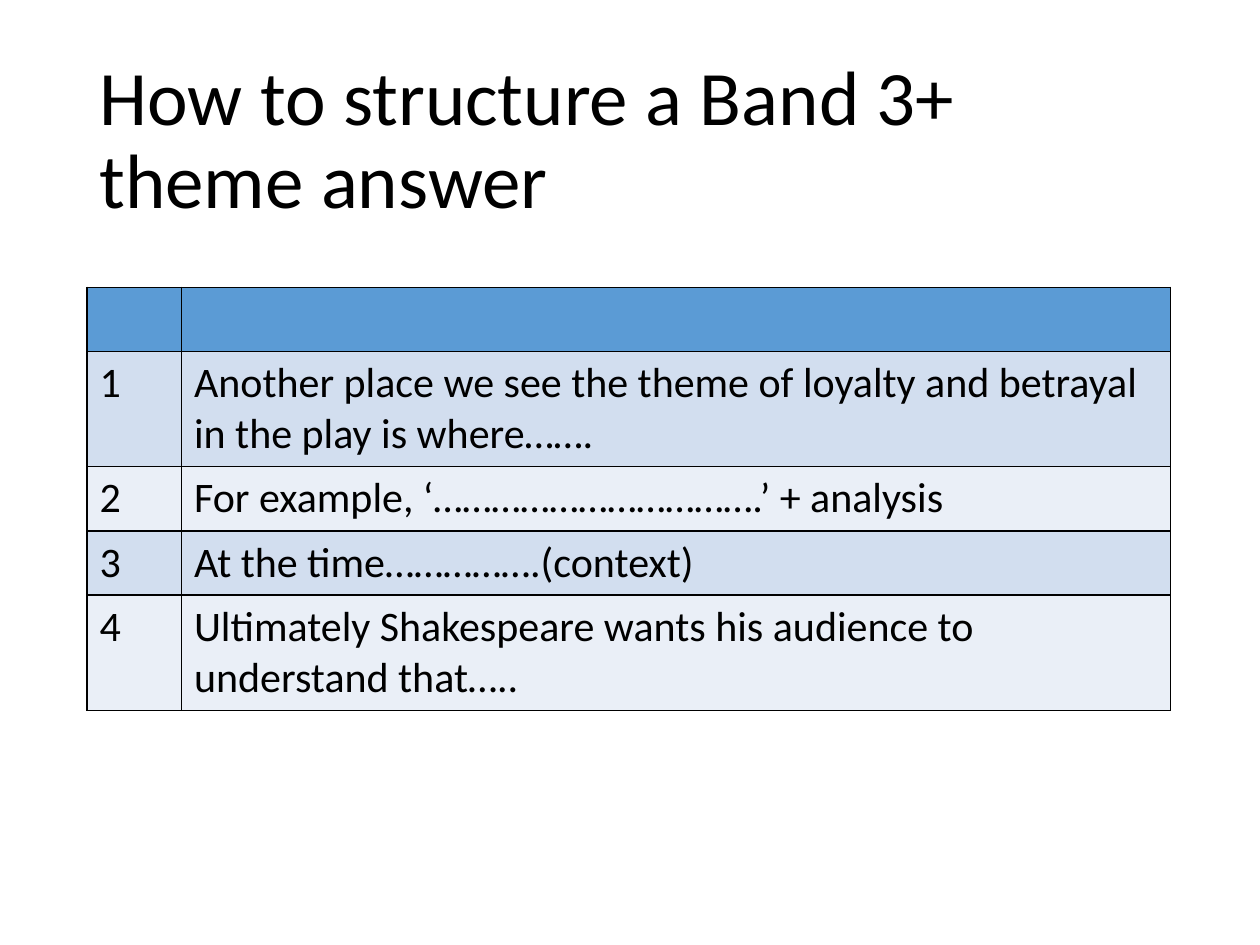
from lxml import etree
from pptx import Presentation
from pptx.dml.color import RGBColor
from pptx.enum import text
from pptx.oxml import ns
from pptx.util import Inches, Pt

BLACK = RGBColor(0x00, 0x00, 0x00)
HEADER_BLUE = RGBColor(0x5B, 0x9B, 0xD5)
BAND_COLORS = (RGBColor(0xD2, 0xDE, 0xEF), RGBColor(0xEA, 0xEF, 0xF7))
FONT = "Calibri"
COLUMN_WIDTHS = (0.75, 7.85)
SINGLE_LINE, DOUBLE_LINE = 0.51, 0.91
STEPS = (
    ("Another place we see the theme of loyalty and betrayal in the play is where…….", DOUBLE_LINE),
    ("For example, ‘…………………………….’ + analysis", SINGLE_LINE),
    ("At the time…………….(context)", SINGLE_LINE),
    ("Ultimately Shakespeare wants his audience to understand that…..", DOUBLE_LINE),
)


def format_paragraph(paragraph, size):
    paragraph.alignment = text.PP_ALIGN.LEFT
    paragraph.font.name = FONT
    paragraph.font.size = Pt(size)
    paragraph.font.bold = False
    paragraph.font.color.rgb = BLACK


def add_title(slide, wording):
    title = slide.shapes.title
    title.left, title.top = Inches(0.69), Inches(0.4)
    title.width, title.height = Inches(8.62), Inches(1.45)
    frame = title.text_frame
    frame.text = wording
    frame.word_wrap = True
    frame.auto_size = text.MSO_AUTO_SIZE.NONE
    frame.vertical_anchor = text.MSO_ANCHOR.MIDDLE
    paragraph = frame.paragraphs[0]
    paragraph.line_spacing = 0.9
    format_paragraph(paragraph, 44)


def add_borders(cell):
    properties = cell._tc.get_or_add_tcPr()
    for position, side in enumerate(("lnL", "lnR", "lnT", "lnB")):
        line = etree.Element(ns.qn(f"a:{side}"), w=str(Pt(1)))
        fill = etree.SubElement(line, ns.qn("a:solidFill"))
        etree.SubElement(fill, ns.qn("a:srgbClr"), val=str(BLACK))
        properties.insert(position, line)


def fill_cell(cell, wording, color):
    cell.text = wording
    cell.fill.solid()
    cell.fill.fore_color.rgb = color
    format_paragraph(cell.text_frame.paragraphs[0], 24)
    add_borders(cell)


def add_steps_table(slide):
    rows = [("", "", SINGLE_LINE, HEADER_BLUE)]
    for index, (wording, height) in enumerate(STEPS):
        rows.append((str(index + 1), wording, height, BAND_COLORS[index % 2]))
    total_height = sum(row[2] for row in rows)
    table = slide.shapes.add_table(
        len(rows), len(COLUMN_WIDTHS), Inches(0.69), Inches(2.28),
        Inches(sum(COLUMN_WIDTHS)), Inches(total_height),
    ).table
    for column, width in zip(table.columns, COLUMN_WIDTHS):
        column.width = Inches(width)
    for row, (number, wording, height, color) in zip(table.rows, rows):
        row.height = Inches(height)
        for cell, content in zip(row.cells, (number, wording)):
            fill_cell(cell, content, color)


def main():
    presentation = Presentation()
    presentation.slide_width = Inches(10)
    presentation.slide_height = Inches(7.5)
    slide = presentation.slides.add_slide(presentation.slide_layouts[5])
    add_title(slide, "How to structure a Band 3+ theme answer")
    add_steps_table(slide)
    presentation.save("out.pptx")


if __name__ == "__main__":
    main()
